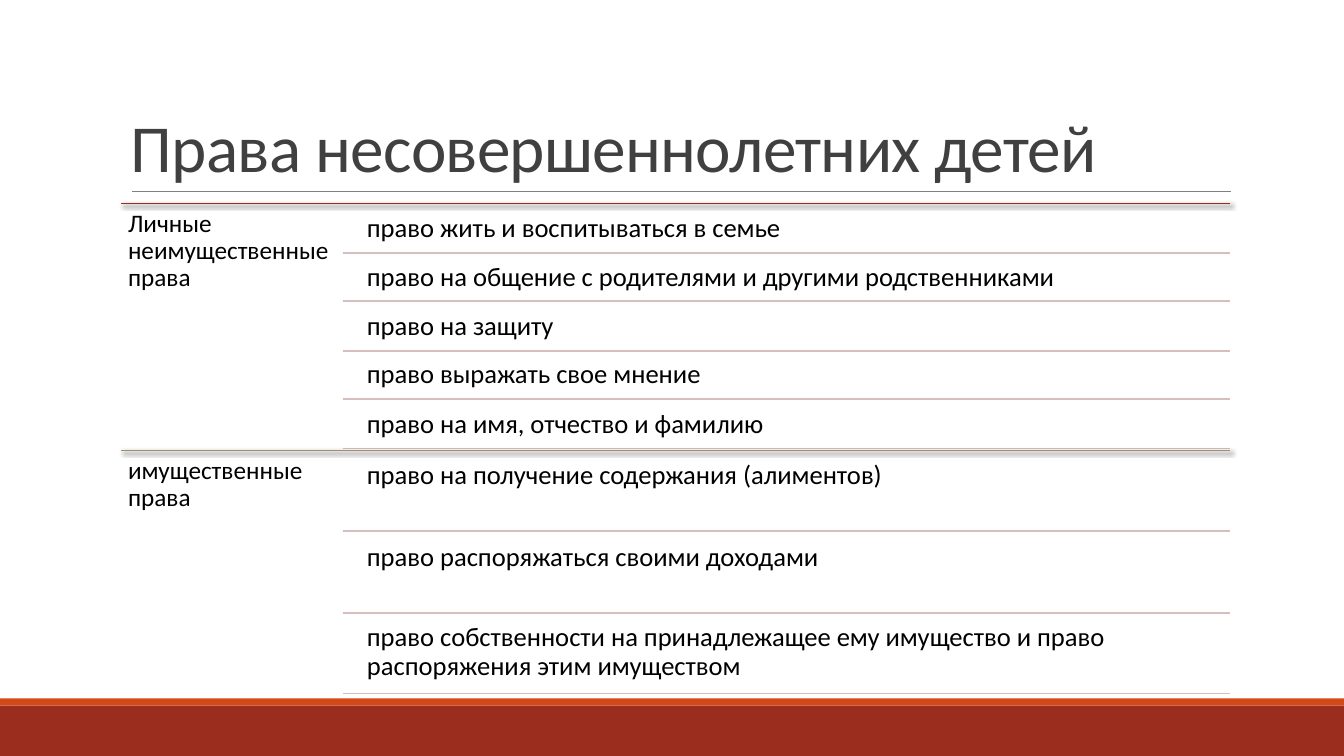
import pptx
import pptx.util
import pptx.dml.color
import pptx.enum.shapes
import pptx.enum.text
import pptx.oxml
import pptx.oxml.ns
import lxml.etree

RGB = pptx.dml.color.RGBColor
RUST = RGB(0x9B, 0x2D, 0x1F)
ORANGE = RGB(0xD3, 0x48, 0x17)
TAN = RGB(0xA2, 0x8E, 0x6A)
ROSE = RGB(0xD5, 0xBE, 0xBD)
GRAY = RGB(0x80, 0x80, 0x80)
DARK = RGB(0x40, 0x40, 0x40)
BLACK = RGB(0, 0, 0)

WIDE, HIGH = 1333, 750
LEFT, SPLIT, RIGHT = 120, 340, 1220
TOP, BAND = 202, 245

RIGHTS = [
    ("Личные неимущественные права", RUST, [
        "право жить и воспитываться в семье",
        "право на общение с родителями и другими родственниками",
        "право на защиту",
        "право выражать свое мнение",
        "право на имя, отчество и фамилию",
    ]),
    ("имущественные права", TAN, [
        "право на получение содержания (алиментов)",
        "право распоряжаться своими доходами",
        "право собственности на принадлежащее ему имущество "
        "и право распоряжения этим имуществом",
    ]),
]

SHADOW = (
    '<a:outerShdw %s blurRad="38100" dist="25400" dir="2700000" algn="tl" rotWithShape="0">'
    '<a:srgbClr val="000000"><a:alpha val="60000"/></a:srgbClr></a:outerShdw>'
    % pptx.oxml.ns.nsdecls("a"))


def px(size):
    """Turn px, 100 to the inch, into EMU."""
    return pptx.util.Emu(size * 9144)


class Board:
    font = "Calibri"

    def __init__(self, deck):
        self.slide = deck.slides.add_slide(deck.slide_layouts[6])
        self.shapes = self.slide.shapes

    def bar(self, left, top, width, height, color):
        kind = pptx.enum.shapes.MSO_SHAPE.RECTANGLE
        shape = self.shapes.add_shape(kind, px(left), px(top), px(width), px(height))
        shape.shadow.inherit = False
        shape.fill.solid()
        shape.fill.fore_color.rgb = color
        shape.line.fill.background()

    def rule(self, left, right, y, color, weight, shade=False):
        kind = pptx.enum.shapes.MSO_CONNECTOR.STRAIGHT
        line = self.shapes.add_connector(kind, px(left), px(y), px(right), px(y))
        line.line.color.rgb = color
        line.line.width = pptx.util.Pt(weight)
        effect = lxml.etree.SubElement(
            line._element.spPr, pptx.oxml.ns.qn("a:effectLst"))
        if shade:
            effect.append(pptx.oxml.parse_xml(SHADOW))

    def text(self, words, left, top, width, height, size, color=BLACK,
             inset=(8, 8), space=0.9, anchor="TOP", track=0):
        """Inset is (side, top and bottom); track is in hundredths of a point."""
        box = self.shapes.add_textbox(px(left), px(top), px(width), px(height))
        frame = box.text_frame
        frame.word_wrap = True
        frame.vertical_anchor = pptx.enum.text.MSO_ANCHOR[anchor]
        frame.margin_left = frame.margin_right = px(inset[0])
        frame.margin_top = frame.margin_bottom = px(inset[1])
        par = frame.paragraphs[0]
        par.text = words
        par.line_spacing = space
        par.font.name = self.font
        par.font.size = pptx.util.Pt(size)
        par.font.color.rgb = color
        if track:
            par.font._rPr.set("spc", str(track))

    def band(self, top, name, color, items):
        """Draw one group of rights; the gaps are a twentieth of a row."""
        self.rule(LEFT, RIGHT, top, color, 1, shade=True)
        self.text(name, LEFT, top, SPLIT - LEFT, BAND, 18, inset=(7, 7))
        count = len(items)
        row = BAND / (count + 0.05 * (count + 1))
        for i, item in enumerate(items):
            base = top + round((i + 1) * row * 1.05)
            self.text(item, 356, base - round(row), 863, round(row), 19)
            self.rule(SPLIT, RIGHT, base, ROSE, 1.25)


def main():
    deck = pptx.Presentation()
    deck.slide_width, deck.slide_height = px(WIDE), px(HIGH)
    board = Board(deck)
    board.bar(0, 700, WIDE, 50, RUST)
    board.bar(0, 693, WIDE, 7, ORANGE)
    board.rule(131, 1221, 190, GRAY, 0.5)
    board.text("Права несовершеннолетних детей", LEFT, 31, 1100, 159, 48, DARK,
               inset=(10, 5), space=0.85, anchor="BOTTOM", track=-50)
    for i, (name, color, items) in enumerate(RIGHTS):
        board.band(TOP + i * BAND, name, color, items)
    deck.save("out.pptx")


if __name__ == "__main__":
    main()
